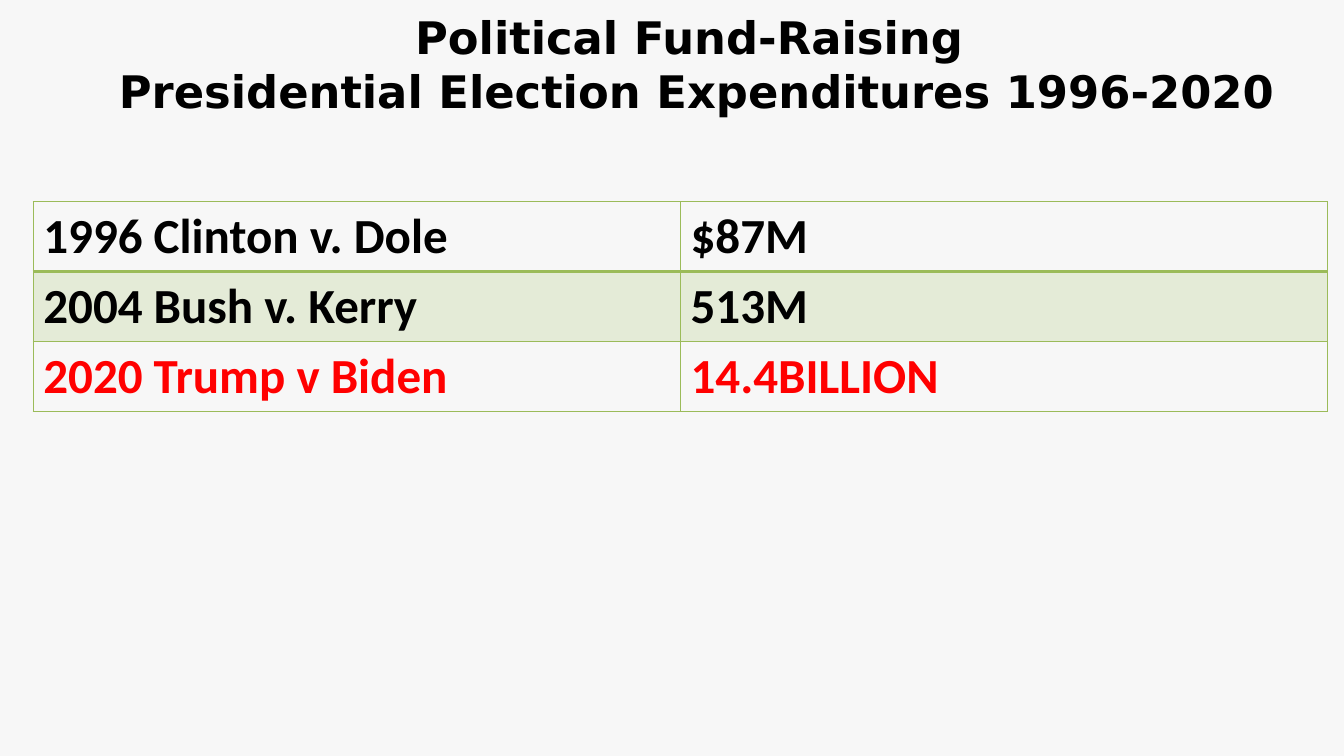
import pptx
import pptx.dml.color
import pptx.enum.text
import pptx.oxml
import pptx.oxml.ns
import pptx.util

Inches = pptx.util.Inches
Pt = pptx.util.Pt
RGBColor = pptx.dml.color.RGBColor

BLACK = RGBColor(0x00, 0x00, 0x00)
RED = RGBColor(0xFF, 0x00, 0x00)
GREEN = RGBColor(0x9B, 0xBB, 0x59)
PAPER = RGBColor(0xF7, 0xF7, 0xF7)

TITLE = "Political Fund-Raising \vPresidential Election Expenditures 1996-2020"
COSTS = [
    ("1996 Clinton v. Dole", "$87M", BLACK),
    ("2004 Bush v. Kerry", "513M", BLACK),
    ("2020 Trump v Biden", "14.4BILLION", RED),
]


def set_font(para, name, size, color):
    para.font.name = name
    para.font.size = Pt(size)
    para.font.bold = True
    para.font.color.rgb = color


def add_title(slide):
    title = slide.shapes.title
    title.left, title.top = Inches(0.25), Inches(0.09)
    title.width, title.height = Inches(13.33), Inches(1.08)
    frame = title.text_frame
    frame.margin_left = frame.margin_right = 0
    frame.margin_top = frame.margin_bottom = 0
    frame.word_wrap = True
    frame.auto_size = pptx.enum.text.MSO_AUTO_SIZE.NONE
    frame.vertical_anchor = pptx.enum.text.MSO_ANCHOR.TOP
    frame.text = TITLE
    para = frame.paragraphs[0]
    para.alignment = pptx.enum.text.PP_ALIGN.CENTER
    para.line_spacing = Pt(38.6)
    set_font(para, "DejaVu Sans", 32, BLACK)


def set_fill(cell, banded):
    if not banded:
        cell.fill.background()
        return
    cell.fill.solid()
    cell.fill.fore_color.rgb = GREEN
    tint = cell._tc.tcPr.find(".//" + pptx.oxml.ns.qn("a:srgbClr"))
    tint.append(pptx.oxml.parse_xml(
        f'<a:alpha {pptx.oxml.ns.nsdecls("a")} val="20000"/>'))


def set_lines(cell, widths):
    for place, (side, width) in enumerate(widths.items()):
        line = pptx.oxml.parse_xml(
            f'<a:ln{side} {pptx.oxml.ns.nsdecls("a")} w="{Pt(width)}">'
            f'<a:solidFill><a:srgbClr val="{GREEN}"/></a:solidFill></a:ln{side}>')
        cell._tc.tcPr.insert(place, line)


def add_costs(slide):
    table = slide.shapes.add_table(
        len(COSTS), 2, Inches(0.33), Inches(2), Inches(12.84), Inches(2.07)).table
    table.horz_banding = False
    for r, (race, cost, color) in enumerate(COSTS):
        widths = {"L": 1, "R": 1, "T": 2 if r == 1 else 1, "B": 2 if r == 0 else 1}
        for c, text in enumerate((race, cost)):
            cell = table.cell(r, c)
            cell.text = text
            set_font(cell.text_frame.paragraphs[0], "Calibri", 35, color)
            set_fill(cell, r % 2 == 1)
            set_lines(cell, widths)


def main():
    deck = pptx.Presentation()
    deck.slide_width, deck.slide_height = Inches(13.33), Inches(7.5)
    slide = deck.slides.add_slide(deck.slide_layouts[5])
    slide.background.fill.solid()
    slide.background.fill.fore_color.rgb = PAPER
    add_title(slide)
    add_costs(slide)
    deck.save("out.pptx")


if __name__ == "__main__":
    main()
